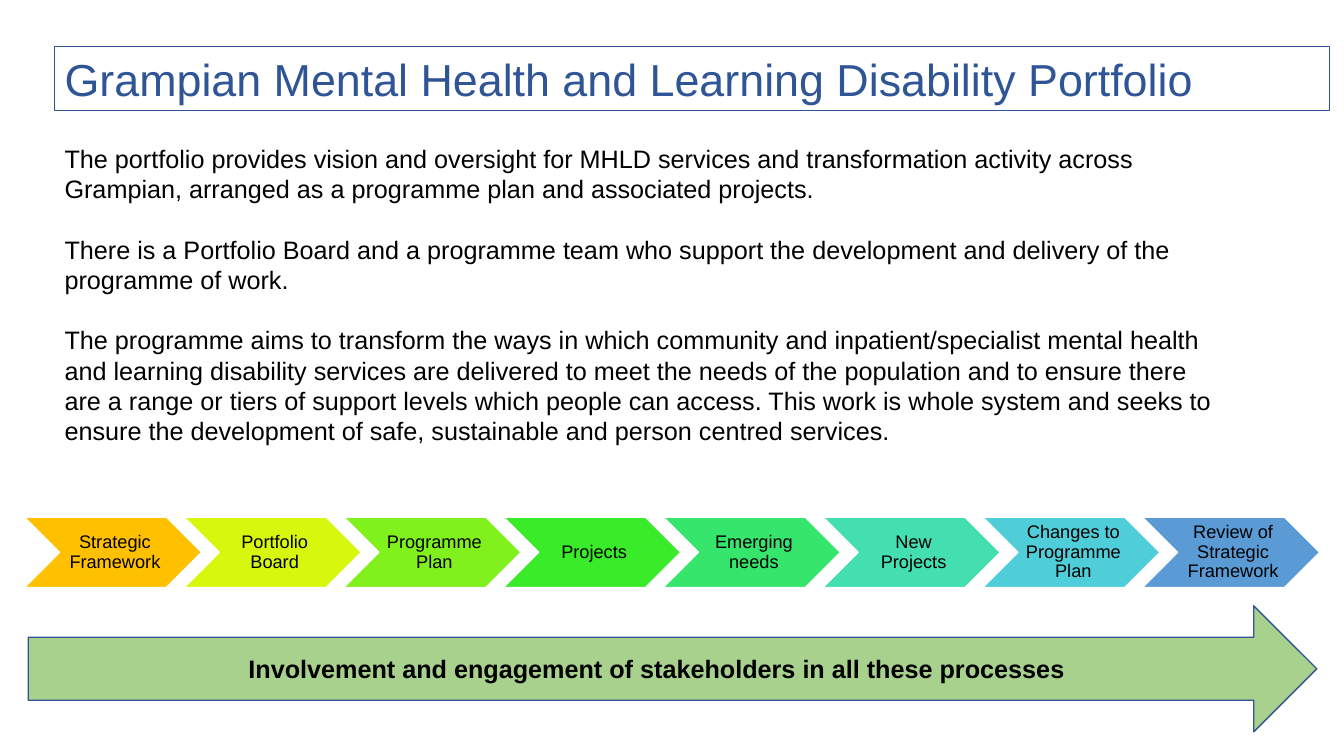
from dataclasses import dataclass

from pptx import Presentation
from pptx import util as u
from pptx.dml.color import RGBColor
from pptx.enum import shapes, text
from pptx.oxml.xmlchemy import OxmlElement


@dataclass(frozen=True)
class Theme:
    font: str = "Arial"
    title_size: float = 32
    body_size: float = 18
    step_size: float = 13
    paragraph_gap: float = 21.6
    ink: str = "000000"
    title: str = "2F5597"
    step_line: str = "FFFFFF"
    arrow: str = "A9D18E"
    arrow_line: str = "325491"


THEME = Theme()

TITLE = "Grampian Mental Health and Learning Disability Portfolio"
BODY = [
    "The portfolio provides vision and oversight for MHLD services and transformation "
    "activity across Grampian, arranged as a programme plan and associated projects.",
    "There is a Portfolio Board and a programme team who support the development and "
    "delivery of the programme of work.",
    "The programme aims to transform the ways in which community and inpatient/specialist "
    "mental health and learning disability services are delivered to meet the needs of the "
    "population and to ensure there are a range or tiers of support levels which people can "
    "access. This work is whole system and seeks to ensure the development of safe, "
    "sustainable and person centred services.",
]
STEPS = [
    ("Strategic Framework", "FFC000"),
    ("Portfolio Board", "D7F80E"),
    ("Programme Plan", "80F11C"),
    ("Projects", "39EB29"),
    ("Emerging needs", "36E56C"),
    ("New Projects", "43DFB0"),
    ("Changes to Programme Plan", "4FCEDA"),
    ("Review of Strategic Framework", "5B9BD5"),
]
ENGAGEMENT = "Involvement and engagement of stakeholders in all these processes"


def place(shape, box):
    shape.left, shape.top, shape.width, shape.height = (u.Inches(length) for length in box)


def outline(shape, color, width):
    shape.line.color.rgb = RGBColor.from_string(color)
    shape.line.width = u.Pt(width)


def set_frame(shape, anchor, insets=(0.1, 0.05, 0.1, 0.05)):
    frame = shape.text_frame
    frame.word_wrap = True
    frame.auto_size = text.MSO_AUTO_SIZE.NONE
    frame.vertical_anchor = anchor
    (frame.margin_left, frame.margin_top,
     frame.margin_right, frame.margin_bottom) = (u.Inches(inset) for inset in insets)
    return frame


def write(paragraph, words, size, align, color=THEME.ink, bold=False):
    paragraph.alignment = align
    paragraph.space_before = u.Pt(0)
    run = paragraph.add_run()
    run.text = words
    run.font.name = THEME.font
    run.font.size = u.Pt(size)
    run.font.bold = bold
    run.font.color.rgb = RGBColor.from_string(color)


def remove_bullet(paragraph):
    properties = paragraph._p.get_or_add_pPr()
    properties.set("marL", "0")
    properties.set("indent", "0")
    properties.append(OxmlElement("a:buNone"))


def add_preset(slide, preset, box, fill, line):
    shape = slide.shapes.add_shape(preset, *(u.Inches(length) for length in box))
    shape.shadow.inherit = False
    shape.fill.solid()
    shape.fill.fore_color.rgb = RGBColor.from_string(fill)
    outline(shape, line, 1)
    return shape


def build_title(slide, box):
    title = slide.shapes.title
    place(title, box)
    outline(title, THEME.title, 0.75)
    frame = set_frame(title, text.MSO_ANCHOR.TOP)
    write(frame.paragraphs[0], TITLE, THEME.title_size, text.PP_ALIGN.LEFT, THEME.title)


def build_body(slide, box):
    body = slide.placeholders[1]
    place(body, box)
    frame = set_frame(body, text.MSO_ANCHOR.TOP)
    for index, words in enumerate(BODY):
        paragraph = frame.add_paragraph() if index else frame.paragraphs[0]
        write(paragraph, words, THEME.body_size, text.PP_ALIGN.LEFT)
        if index:
            paragraph.space_before = u.Pt(THEME.paragraph_gap)
        remove_bullet(paragraph)


def build_steps(slide, box):
    left, top, width, height = box
    step_width = 1.76
    pitch = (width - step_width) / (len(STEPS) - 1)
    for index, (words, fill) in enumerate(STEPS):
        step_box = (left + index * pitch, top, step_width, height)
        step = add_preset(slide, shapes.MSO_SHAPE.CHEVRON, step_box, fill, THEME.step_line)
        frame = set_frame(step, text.MSO_ANCHOR.MIDDLE, (0.06, 0.02, 0.02, 0.02))
        paragraph = frame.paragraphs[0]
        write(paragraph, words, THEME.step_size, text.PP_ALIGN.CENTER)
        paragraph.line_spacing = 0.9


def build_engagement(slide, box):
    arrow = add_preset(slide, shapes.MSO_SHAPE.RIGHT_ARROW, box, THEME.arrow, THEME.arrow_line)
    frame = set_frame(arrow, text.MSO_ANCHOR.MIDDLE)
    write(frame.paragraphs[0], ENGAGEMENT, THEME.body_size, text.PP_ALIGN.CENTER, bold=True)


def main():
    presentation = Presentation()
    presentation.slide_width = u.Inches(13.33)
    presentation.slide_height = u.Inches(7.5)
    slide = presentation.slides.add_slide(presentation.slide_layouts[1])
    build_title(slide, (0.54, 0.46, 12.65, 0.64))
    build_body(slide, (0.54, 1.37, 11.66, 3.43))
    build_steps(slide, (0.24, 5.13, 12.85, 0.7))
    build_engagement(slide, (0.28, 6.01, 12.78, 1.25))
    presentation.save("out.pptx")


if __name__ == "__main__":
    main()
